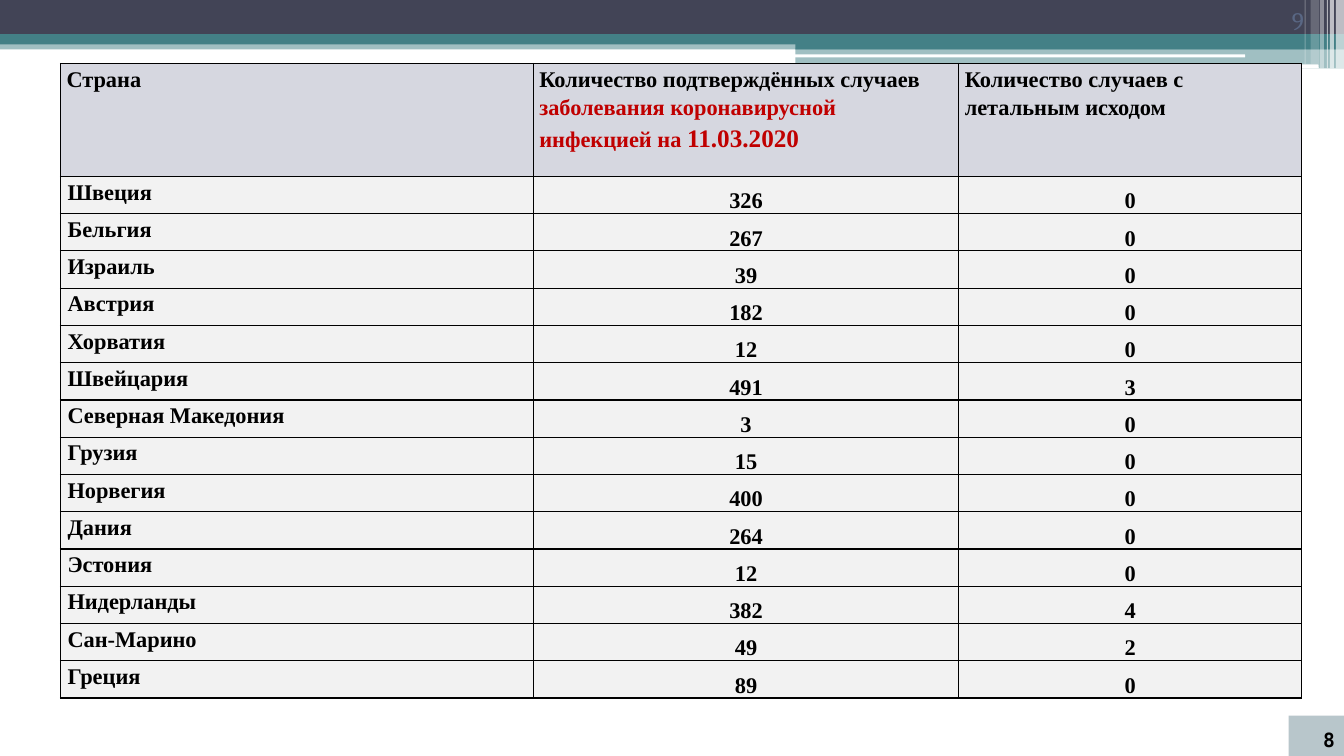
from lxml import etree
from pptx import Presentation
from pptx.dml.color import RGBColor
from pptx.enum.shapes import MSO_SHAPE
from pptx.enum.text import MSO_ANCHOR, PP_ALIGN
from pptx.oxml.ns import qn
from pptx.util import Inches, Pt

RECTANGLE, ROUNDED = MSO_SHAPE.RECTANGLE, MSO_SHAPE.ROUNDED_RECTANGLE
TOP, BOTTOM = MSO_ANCHOR.TOP, MSO_ANCHOR.BOTTOM
LEFT, CENTER, RIGHT = PP_ALIGN.LEFT, PP_ALIGN.CENTER, PP_ALIGN.RIGHT

COLORS = {
    "dark": "424456", "teal": "438086", "white": "FFFFFF", "black": "000000",
    "red": "C00000", "header": "D6D7E0", "row": "F2F2F2",
    "number": "596784", "badge": "9BAFB5",
}

# left, top, width, height, color, opacity in percent
BANDS = [
    (0, 0.4, 13.33, 0.09, "teal", 50),
    (0, 0, 13.33, 0.34, "dark", 100),
    (0, 0.34, 13.33, 0.1, "teal", 100),
    (7.89, 0.39, 5.44, 0.1, "teal", 100),
    (7.89, 0.48, 5.44, 0.2, "teal", 50),
]
ROUNDED_BARS = [(7.88, 0.54, 4.47, 0.03), (10.75, 0.64, 2.33, 0.04)]
# left, width, height, opacity in percent
STRIPES = [
    (13.25, 0.08, 0.68, 65), (13.19, 0.04, 0.68, 65), (13.16, 0.01, 0.68, 60),
    (13.09, 0.04, 0.68, 40), (13, 0.08, 0.64, 20), (12.94, 0.01, 0.64, 30),
]

# Each heading is a list of runs: text, color, size
HEADINGS = [
    [("Страна", "black", 16)],
    [("Количество подтверждённых случаев ", "black", 16),
     ("заболевания коронавирусной инфекцией на ", "red", 16),
     ("11.03.2020", "red", 18)],
    [("Количество случаев с летальным исходом", "black", 16)],
]
CASES = [
    ("Швеция", 326, 0), ("Бельгия", 267, 0), ("Израиль", 39, 0),
    ("Австрия", 182, 0), ("Хорватия", 12, 0), ("Швейцария", 491, 3),
    ("Северная Македония", 3, 0), ("Грузия", 15, 0), ("Норвегия", 400, 0),
    ("Дания", 264, 0), ("Эстония", 12, 0), ("Нидерланды", 382, 4),
    ("Сан-Марино", 49, 2), ("Греция", 89, 0),
]
COLUMN_WIDTHS = (4.69, 4.22, 3.4)
HEADER_HEIGHT, ROW_HEIGHT = 1.12, 0.37


def set_attributes(target, values):
    for name, value in values.items():
        setattr(target, name, value)


class SlideBuilder:
    """Holds the text style and the slide being filled."""

    def __init__(self, slide, font="Times New Roman"):
        self.slide = slide
        self.font = font

    def shape(self, kind, left, top, width, height, color, opacity=100):
        box = [Inches(value) for value in (left, top, width, height)]
        shape = self.slide.shapes.add_shape(kind, *box)
        shape.shadow.inherit = False
        shape.line.fill.background()
        shape.fill.solid()
        shape.fill.fore_color.rgb = RGBColor.from_string(COLORS[color])
        if opacity < 100:
            color_element = shape.element.spPr.find(qn("a:solidFill"))[0]
            etree.SubElement(color_element, qn("a:alpha"), val=str(opacity * 1000))
        return shape

    def text_box(self, left, top, width, height):
        box = [Inches(value) for value in (left, top, width, height)]
        return self.slide.shapes.add_textbox(*box)

    def add_runs(self, paragraph, runs, alignment, font=None, bold=True):
        paragraph.alignment = alignment
        for text, color, size in runs:
            run = paragraph.add_run()
            run.text = text
            set_attributes(run.font, {"name": font or self.font, "size": Pt(size), "bold": bold})
            run.font.color.rgb = RGBColor.from_string(COLORS[color])

    def page_number(self, shape, text, color, size, font, bold):
        frame = shape.text_frame
        set_attributes(frame, {"word_wrap": True, "vertical_anchor": BOTTOM})
        self.add_runs(frame.paragraphs[0], [(text, color, size)], RIGHT, font, bold)

    def border(self, cell):
        properties = cell._tc.get_or_add_tcPr()
        for side in ("a:lnL", "a:lnR", "a:lnT", "a:lnB"):
            line = etree.SubElement(properties, qn(side), w=str(Pt(1)))
            fill = etree.SubElement(line, qn("a:solidFill"))
            etree.SubElement(fill, qn("a:srgbClr"), val=COLORS["black"])

    def cell(self, cell, runs, color, margin, alignment=LEFT, anchor=TOP):
        self.border(cell)
        cell.fill.solid()
        cell.fill.fore_color.rgb = RGBColor.from_string(COLORS[color])
        set_attributes(cell, {
            "margin_left": Inches(margin), "margin_right": Inches(margin),
            "margin_top": 0, "margin_bottom": 0, "vertical_anchor": anchor,
        })
        paragraph = cell.text_frame.paragraphs[0]
        paragraph.line_spacing = 1.15
        self.add_runs(paragraph, runs, alignment)

    def table(self, left, top, headings, records):
        height = HEADER_HEIGHT + ROW_HEIGHT * len(records)
        table = self.slide.shapes.add_table(
            len(records) + 1, len(headings), Inches(left), Inches(top),
            Inches(sum(COLUMN_WIDTHS)), Inches(height)).table
        for column, width in zip(table.columns, COLUMN_WIDTHS):
            column.width = Inches(width)
        for index, row in enumerate(table.rows):
            row.height = Inches(ROW_HEIGHT if index else HEADER_HEIGHT)
        for column, runs in enumerate(headings):
            self.cell(table.cell(0, column), runs, "header", 0.06)
        for row, record in enumerate(records, 1):
            for column, value in enumerate(record):
                placement = (CENTER, BOTTOM) if column else (LEFT, TOP)
                self.cell(table.cell(row, column), [(str(value), "black", 16)],
                          "row", 0.07, *placement)


def main():
    presentation = Presentation()
    presentation.slide_width = Inches(13.33)
    presentation.slide_height = Inches(7.5)
    builder = SlideBuilder(presentation.slides.add_slide(presentation.slide_layouts[6]))

    for band in BANDS:
        builder.shape(RECTANGLE, *band)
    for bar in ROUNDED_BARS:
        builder.shape(ROUNDED, *bar, "white")
    for left, width, height, opacity in STRIPES:
        builder.shape(RECTANGLE, left, 0, width, height, "white", opacity)

    builder.table(0.6, 0.63, HEADINGS, CASES)
    builder.page_number(builder.text_box(11.92, 0, 1.11, 0.4),
                        "9", "number", 18, "Cambria", False)
    badge = builder.shape(RECTANGLE, 12.78, 7.1, 0.56, 0.4, "badge", 70)
    builder.page_number(badge, "8", "black", 14, "DejaVu Sans Mono", True)

    presentation.save("out.pptx")


if __name__ == "__main__":
    main()
